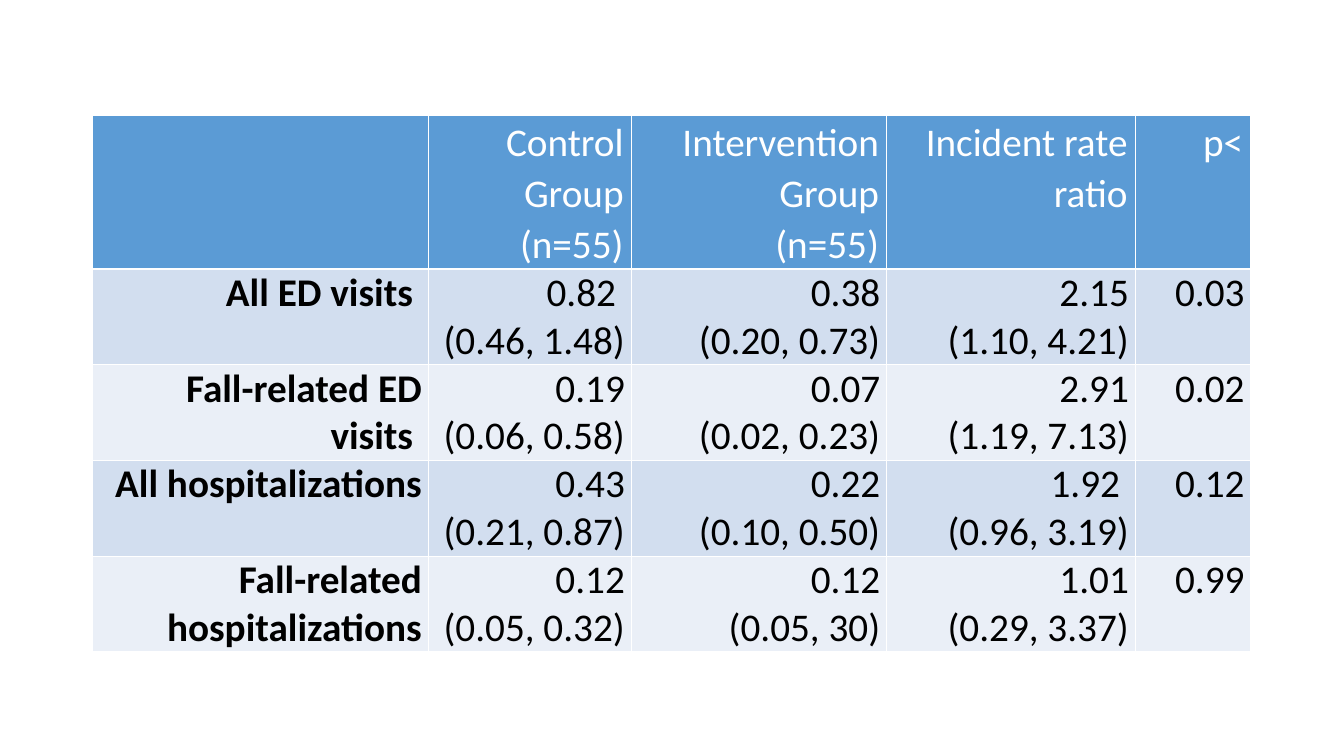
from dataclasses import dataclass

from lxml.etree import SubElement
from pptx import Presentation
from pptx.dml.color import RGBColor
from pptx.enum.text import PP_ALIGN
from pptx.oxml.ns import qn
from pptx.table import _Cell
from pptx.util import Emu, Pt

PX = 9144  # EMU per px, at 100 px to the inch


@dataclass(frozen=True)
class Theme:
    font: str = "Calibri"
    size: int = 42
    header_fill: str = "5B9BD5"
    bands: tuple[str, str] = ("D2DEEF", "EAEFF7")
    header_text: str = "FFFFFF"
    body_text: str = "000000"
    border: str = "FFFFFF"
    thin: int = 1
    thick: int = 3


@dataclass(frozen=True)
class CellStyle:
    fill: str
    color: str
    inset: int
    bold: bool = False
    spacing: float = 1.0
    bottom: int = 1


@dataclass(frozen=True)
class Outcome:
    label: str
    control: str
    intervention: str
    ratio: str
    p_value: str

    def texts(self) -> list[str]:
        return [self.label, self.control, self.intervention, self.ratio, self.p_value]


THEME = Theme()
LEFT, TOP = 137, 172
COLUMNS = [500, 302, 380, 370, 172]
HEADER_HEIGHT, ROW_HEIGHT = 221, 140

# Each line of a cell is a paragraph
HEADER = ["", "Control\nGroup\n(n=55)", "Intervention\nGroup\n(n=55)",
          "Incident rate ratio", "p<"]
OUTCOMES = [
    Outcome("All ED visits ", "0.82 \n(0.46, 1.48)", "0.38\n(0.20, 0.73)",
            "2.15\n (1.10, 4.21)", "0.03"),
    Outcome("Fall-related ED visits ", "0.19\n(0.06, 0.58)", "0.07\n(0.02, 0.23)",
            "2.91\n(1.19, 7.13)", "0.02"),
    Outcome("All hospitalizations", "0.43\n(0.21, 0.87)", "0.22\n(0.10, 0.50)",
            "1.92 \n(0.96, 3.19)", "0.12"),
    Outcome("Fall-related hospitalizations", "0.12\n(0.05, 0.32)", "0.12\n(0.05, 30)",
            "1.01\n(0.29, 3.37)", "0.99"),
]


def px(n: int) -> Emu:
    return Emu(n * PX)


def set_borders(cell: _Cell, bottom: int) -> None:
    tc_pr = cell._tc.get_or_add_tcPr()
    widths = {"lnL": THEME.thin, "lnR": THEME.thin, "lnT": THEME.thin, "lnB": bottom}
    for tag, width in widths.items():
        ln = SubElement(tc_pr, qn(f"a:{tag}"), w=str(Pt(width)))
        fill = SubElement(ln, qn("a:solidFill"))
        SubElement(fill, qn("a:srgbClr"), val=THEME.border)


def fill_cell(cell: _Cell, text: str, style: CellStyle) -> None:
    # Borders come before the fill in the cell properties
    set_borders(cell, style.bottom)
    cell.fill.solid()
    cell.fill.fore_color.rgb = RGBColor.from_string(style.fill)
    cell.margin_left = cell.margin_right = px(style.inset)
    cell.margin_top = cell.margin_bottom = 0
    if not text:
        return
    tf = cell.text_frame
    for i, line in enumerate(text.split("\n")):
        p = tf.add_paragraph() if i else tf.paragraphs[0]
        p.alignment = PP_ALIGN.RIGHT
        p.line_spacing = style.spacing
        r = p.add_run()
        r.text = line
        r.font.name = THEME.font
        r.font.size = Pt(THEME.size)
        r.font.bold = style.bold
        r.font.color.rgb = RGBColor.from_string(style.color)


def main() -> None:
    prs = Presentation()
    prs.slide_width, prs.slide_height = px(2000), px(1125)
    s = prs.slides.add_slide(prs.slide_layouts[6])

    # Table grid
    heights = [HEADER_HEIGHT] + [ROW_HEIGHT] * len(OUTCOMES)
    table = s.shapes.add_table(len(heights), len(COLUMNS), px(LEFT), px(TOP),
                               px(sum(COLUMNS)), px(sum(heights))).table
    for column, width in zip(table.columns, COLUMNS):
        column.width = px(width)
    for row, height in zip(table.rows, heights):
        row.height = px(height)

    # Header row
    header = CellStyle(THEME.header_fill, THEME.header_text, inset=11,
                       spacing=1.07, bottom=THEME.thick)
    for c, text in enumerate(HEADER):
        fill_cell(table.cell(0, c), text, header)

    # Outcome rows in alternating bands, with bold labels
    for i, outcome in enumerate(OUTCOMES):
        for c, text in enumerate(outcome.texts()):
            style = CellStyle(THEME.bands[i % 2], THEME.body_text, inset=9,
                              bold=c == 0, bottom=THEME.thin)
            fill_cell(table.cell(i + 1, c), text, style)

    prs.save("out.pptx")


if __name__ == "__main__":
    main()
